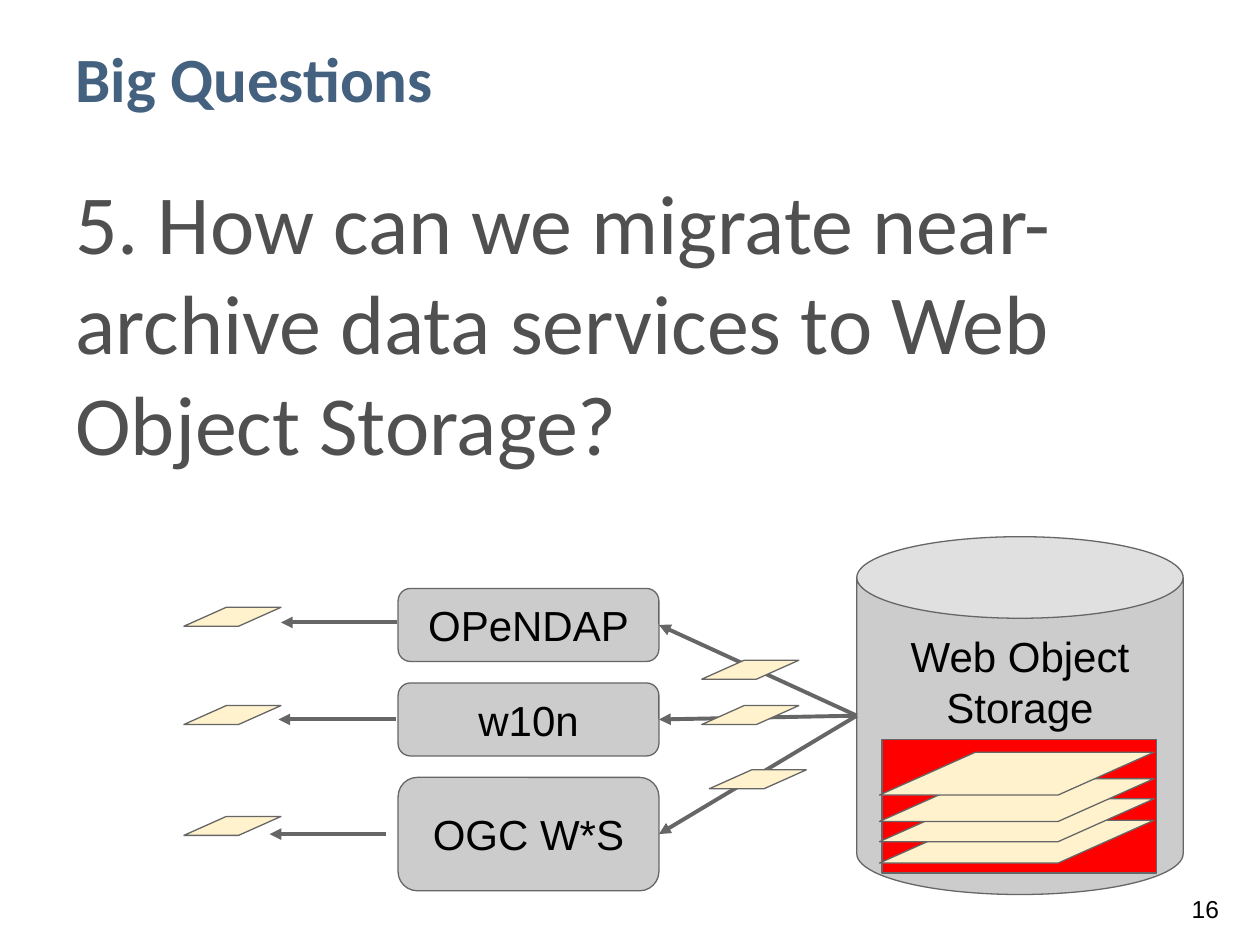
from lxml.etree import SubElement
from pptx import Presentation
from pptx.dml.color import RGBColor
from pptx.enum.shapes import MSO_CONNECTOR, MSO_SHAPE
from pptx.enum.text import MSO_ANCHOR, PP_ALIGN
from pptx.oxml.ns import qn
from pptx.util import Inches, Pt

GREY = RGBColor(0xCC, 0xCC, 0xCC)
OUTLINE = RGBColor(0x66, 0x66, 0x66)
RED = RGBColor(0xFF, 0x00, 0x00)
CREAM = RGBColor(0xFF, 0xF2, 0xCC)
BLACK = RGBColor(0x00, 0x00, 0x00)
BLUE = RGBColor(0x44, 0x62, 0x80)
BODY = RGBColor(0x50, 0x50, 0x50)

deck = Presentation()
deck.slide_width = Inches(10)
deck.slide_height = Inches(7.5)
page = deck.slides.add_slide(deck.slide_layouts[6])
column = deck.slide_width / 100
row = deck.slide_height / 75


def add_figure(kind, left, top, width, height, fill, adjustment=None):
    figure = page.shapes.add_shape(
        kind, round(left * column), round(top * row),
        round(width * column), round(height * row))
    figure.shadow.inherit = False
    figure.fill.solid()
    figure.fill.fore_color.rgb = fill
    figure.line.color.rgb = OUTLINE
    figure.line.width = Pt(0.75)
    if adjustment is not None:
        figure.adjustments[0] = adjustment
    return figure


def write(box, text, size, color=BLACK, font="Arial", anchor=MSO_ANCHOR.MIDDLE,
          align=PP_ALIGN.CENTER):
    frame = box.text_frame
    frame.word_wrap = True
    frame.vertical_anchor = anchor
    frame.margin_left = frame.margin_right = Inches(0.1)
    frame.margin_top = frame.margin_bottom = Inches(0.1)
    para = frame.paragraphs[0]
    para.alignment = align
    span = para.add_run()
    span.text = text
    span.font.size = Pt(size)
    span.font.name = font
    span.font.color.rgb = color
    return span


storage = add_figure(MSO_SHAPE.CAN, 68, 42.6, 25.9, 28.4, GREY, 0.25)
write(storage, "Web Object Storage", 24, anchor=MSO_ANCHOR.TOP)
add_figure(MSO_SHAPE.RECTANGLE, 70, 58.7, 21.8, 10.6, RED)

texts = [
    ("Big Questions", 36, BLUE, "Calibri", MSO_ANCHOR.BOTTOM, (5, 2.9, 90, 7.2)),
    ("5. How can we migrate near-archive data services to Web Object Storage?",
     48, BODY, "Calibri", MSO_ANCHOR.TOP, (5, 12.5, 90, 28.4)),
    ("16", 14, BLACK, "Arial", MSO_ANCHOR.MIDDLE, (93.6, 69.3, 6, 5.7)),
]
for text, size, color, font, anchor, (left, top, width, height) in texts:
    box = page.shapes.add_textbox(
        round(left * column), round(top * row),
        round(width * column), round(height * row))
    span = write(box, text, size, color, font, anchor, PP_ALIGN.LEFT)
    span.font.bold = text == "Big Questions"

services = [("OPeNDAP", 5.8), ("w10n", 5.8), ("OGC W*S", 9)]
for index, (name, height) in enumerate(services):
    service = add_figure(MSO_SHAPE.ROUNDED_RECTANGLE, 31.6, 46.7 + 7.5 * index,
                         20.7, height, GREY, 0.17)
    write(service, name, 24)

arrows = [(68, 56.8, 52.3, end) for end in (49.6, 57.1, 66.2)]
arrows += [(31.5, 49.4, 22.3, 49.4), (31.4, 57.1, 22.1, 57.1),
           (30.6, 66.2, 21.4, 66.2)]
for start_x, start_y, end_x, end_y in arrows:
    arrow = page.shapes.add_connector(
        MSO_CONNECTOR.STRAIGHT, round(start_x * column), round(start_y * row),
        round(end_x * column), round(end_y * row))
    arrow.line.color.rgb = OUTLINE
    arrow.line.width = Pt(2.25)
    SubElement(arrow.line._get_or_add_ln(), qn("a:tailEnd"), type="triangle")
    SubElement(arrow._element.spPr, qn("a:effectLst"))

for top in (65.1, 63.4, 61.8, 59.7):
    add_figure(MSO_SHAPE.PARALLELOGRAM, 69.8, top, 21.8, 3.4, CREAM, 2.24)

small_sheets = [(55.7, 52.4), (55.7, 56), (56.3, 61.1),
                (14.6, 48.2), (14.6, 56), (14.6, 64.8)]
for left, top in small_sheets:
    add_figure(MSO_SHAPE.PARALLELOGRAM, left, top, 7.7, 1.5, CREAM, 2.24)

deck.save("out.pptx")
